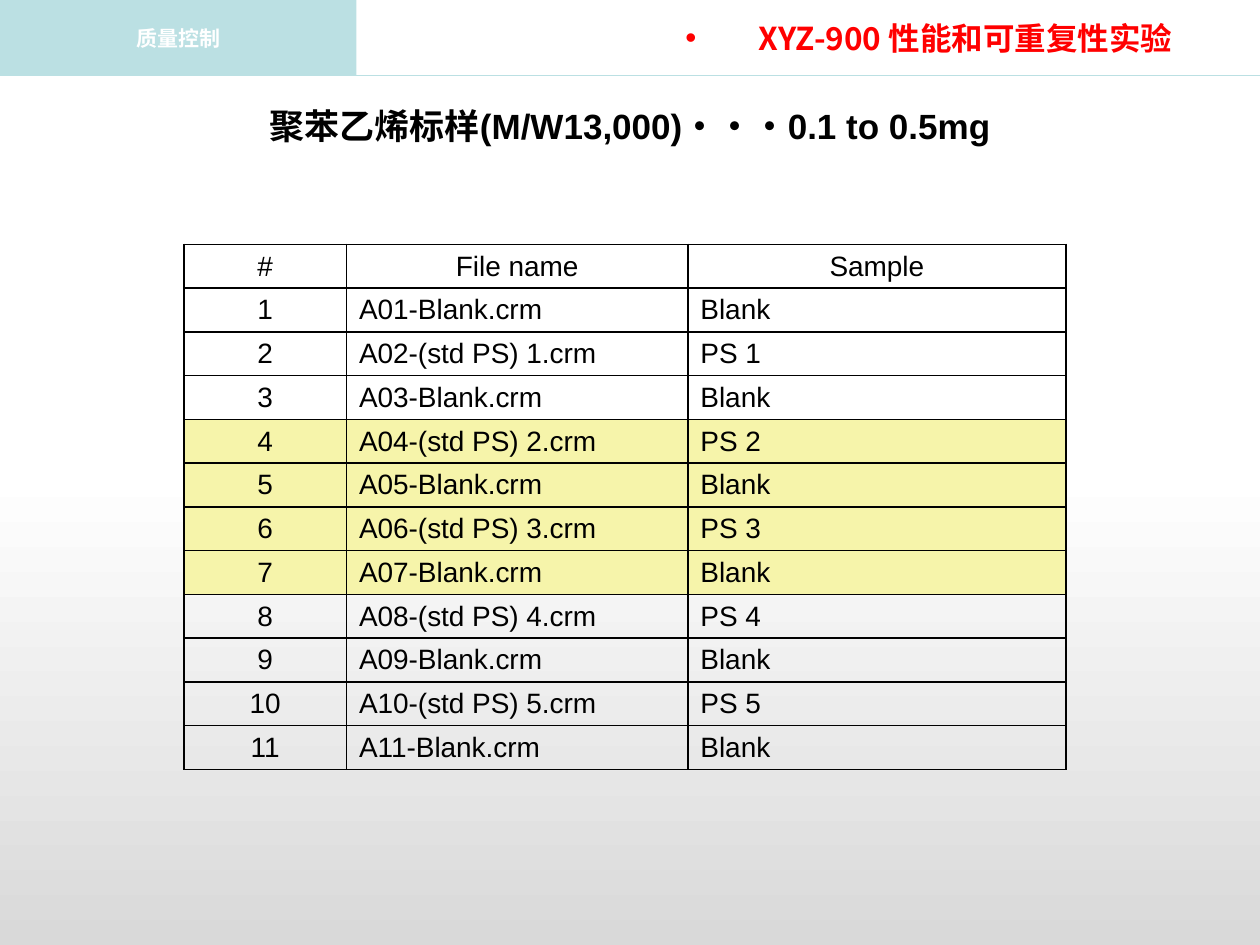
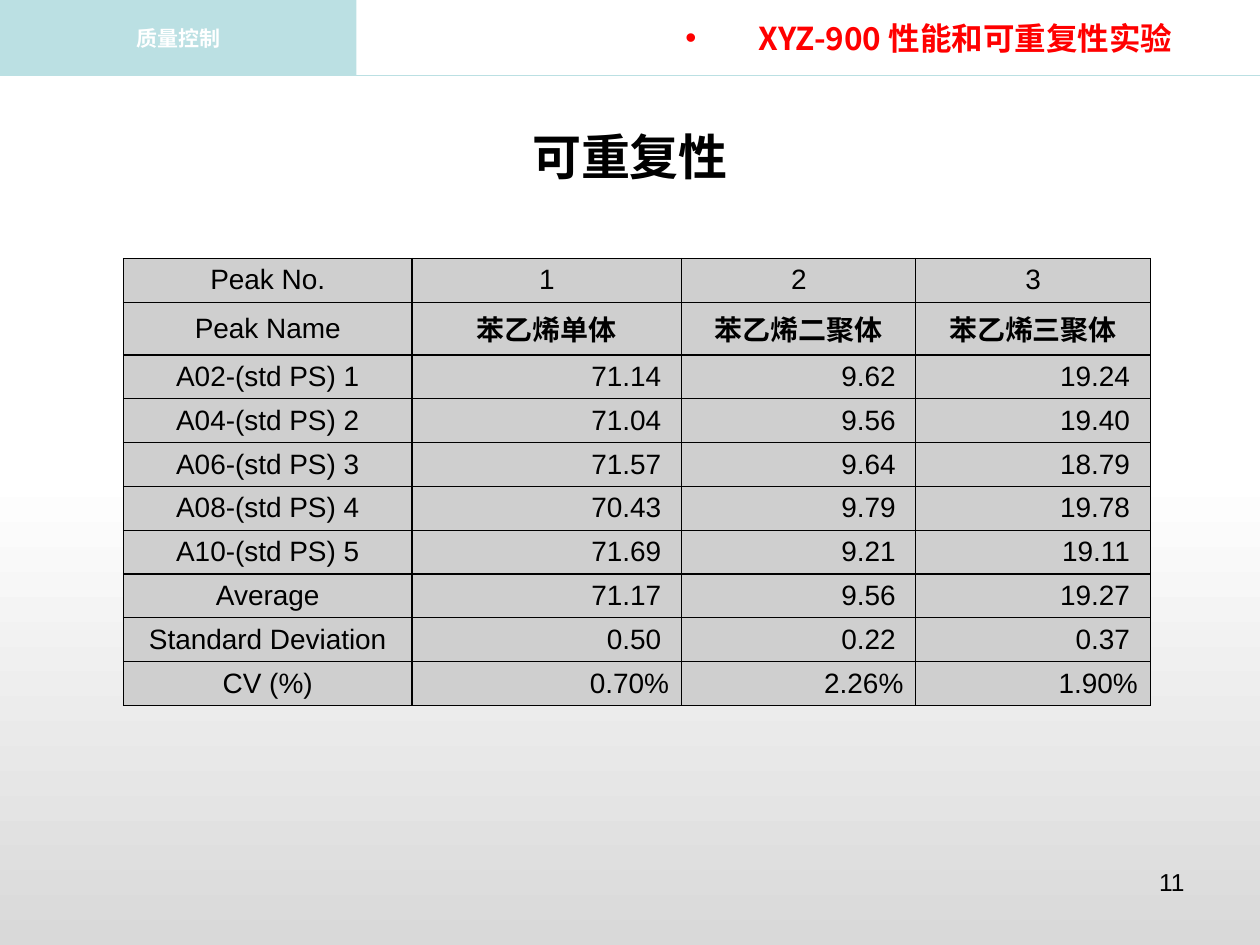
from lxml.etree import SubElement
from pptx import Presentation
from pptx.dml.color import RGBColor
from pptx.enum.shapes import MSO_CONNECTOR, MSO_SHAPE
from pptx.enum.text import MSO_ANCHOR, MSO_AUTO_SIZE, PP_ALIGN
from pptx.oxml.ns import qn
from pptx.util import Inches, Pt

SECTION = "质量控制"
HEADING = "XYZ-900 性能和可重复性实验"
LATIN, CHINESE = "Arial", "Noto Sans CJK SC"

SAMPLES_TITLE = [("聚苯乙烯标样", CHINESE), ("(M/W13,000)・・・0.1 to 0.5mg", LATIN)]
SAMPLES_HEADER = ("#", "File name", "Sample")
SAMPLE_COUNT = 11
HIGHLIGHTED_SAMPLES = range(4, 8)

REPEATABILITY_TITLE = [("可重复性", CHINESE)]
PEAK_ROWS = [
    ("Peak No.", "1", "2", "3"),
    ("Peak Name", "苯乙烯单体", "苯乙烯二聚体", "苯乙烯三聚体"),
    ("A02-(std PS) 1", "71.14 ", "9.62 ", "19.24 "),
    ("A04-(std PS) 2", "71.04 ", "9.56 ", "19.40 "),
    ("A06-(std PS) 3", "71.57 ", "9.64 ", "18.79 "),
    ("A08-(std PS) 4", "70.43 ", "9.79 ", "19.78 "),
    ("A10-(std PS) 5", "71.69 ", "9.21 ", "19.11 "),
    ("Average", "71.17 ", "9.56 ", "19.27 "),
    ("Standard Deviation", "0.50 ", "0.22 ", "0.37 "),
    ("CV (%)", "0.70%", "2.26%", "1.90%"),
]
PEAK_NAME_ROW = 1

BLACK = RGBColor(0x00, 0x00, 0x00)
WHITE = RGBColor(0xFF, 0xFF, 0xFF)
RED = RGBColor(0xFF, 0x00, 0x00)
BAND = RGBColor(0xBB, 0xE0, 0xE3)
BACKDROP_GREY = RGBColor(0xD9, 0xD9, 0xD9)
TABLE_GREY = RGBColor(0xCF, 0xCF, 0xCF)
YELLOW = RGBColor(0xF6, 0xF4, 0xAA)

PAGE_WIDTH, PAGE_HEIGHT = 10, 7.5
BAND_WIDTH, BAND_HEIGHT = 2.83, 0.6


def write(para, text, size, font=LATIN, color=BLACK, bold=False, align=None):
    span = para.add_run()
    span.text = text
    span.font.size = Pt(size)
    span.font.bold = bold
    span.font.color.rgb = color
    span.font.name = font
    SubElement(span.font._element, qn("a:ea"), typeface=CHINESE)
    if align is not None:
        para.alignment = align


def place(box, left, top, width, height, anchor=MSO_ANCHOR.MIDDLE):
    box.left, box.top = Inches(left), Inches(top)
    box.width, box.height = Inches(width), Inches(height)
    frame = box.text_frame
    frame.word_wrap = True
    frame.auto_size = MSO_AUTO_SIZE.NONE
    frame.vertical_anchor = anchor
    return frame.paragraphs[0]


def add_rectangle(page, width, height):
    box = page.shapes.add_shape(MSO_SHAPE.RECTANGLE, 0, 0, Inches(width), Inches(height))
    box.shadow.inherit = False
    box.line.fill.background()
    return box


def add_backdrop(page):
    fill = add_rectangle(page, PAGE_WIDTH, PAGE_HEIGHT).fill
    fill.gradient()
    fill.gradient_angle = 90
    for stop, position, color in zip(fill.gradient_stops, (0, 0.5), (BACKDROP_GREY, WHITE)):
        stop.position = position
        stop.color.rgb = color


def add_band(page):
    band = add_rectangle(page, BAND_WIDTH, BAND_HEIGHT)
    band.fill.solid()
    band.fill.fore_color.rgb = BAND
    para = place(band, 0, 0, BAND_WIDTH, BAND_HEIGHT)
    write(para, SECTION, 12, color=WHITE, bold=True, align=PP_ALIGN.CENTER)

    rule = page.shapes.add_connector(
        MSO_CONNECTOR.STRAIGHT, 0, Inches(BAND_HEIGHT), Inches(PAGE_WIDTH), Inches(BAND_HEIGHT))
    rule.line.color.rgb = BAND
    rule.line.width = Pt(0.75)
    SubElement(rule._element.spPr, qn("a:effectLst"))


def fill_heading(box):
    para = place(box, 4.84, 0, 5.16, BAND_HEIGHT)
    para.level = 1
    settings = para._p.get_or_add_pPr()
    settings.set("marL", str(Inches(1.08)))
    settings.set("indent", str(Inches(-0.58)))
    SubElement(settings, qn("a:buChar"), char="•")
    write(para, HEADING, 18, font=CHINESE, color=RED, bold=True)


def add_page(deck, title, title_size, title_top, title_height):
    page = deck.slides.add_slide(deck.slide_layouts[1])
    title_box, heading_box = page.placeholders
    add_backdrop(page)
    add_band(page)
    for box in (title_box, heading_box):
        page.shapes._spTree.append(box._element)  # bring in front of the backdrop
    para = place(title_box, 0, title_top, PAGE_WIDTH, title_height)
    for text, font in title:
        write(para, text, title_size, font=font, bold=True, align=PP_ALIGN.CENTER)
    fill_heading(heading_box)
    return page


def add_borders(cell, width):
    settings = cell._tc.get_or_add_tcPr()
    for side in ("lnL", "lnR", "lnT", "lnB"):
        line = SubElement(settings, qn(f"a:{side}"), w=str(Pt(width)))
        SubElement(SubElement(line, qn("a:solidFill")), qn("a:srgbClr"), val=str(BLACK))


def add_grid(page, rows, left, top, column_widths, row_heights, border, style):
    """Add a table; style(row, column) gives alignment, fill colour or None, and bold."""
    table = page.shapes.add_table(
        len(rows), len(column_widths), Inches(left), Inches(top),
        Inches(sum(column_widths)), Inches(sum(row_heights))).table
    table.first_row = table.horz_banding = False
    for column, width in zip(table.columns, column_widths):
        column.width = Inches(width)
    for r, (texts, height) in enumerate(zip(rows, row_heights)):
        table.rows[r].height = Inches(height)
        for c, text in enumerate(texts):
            align, color, bold = style(r, c)
            cell = table.cell(r, c)
            cell.margin_top = cell.margin_bottom = Inches(0.04)
            cell.vertical_anchor = MSO_ANCHOR.MIDDLE
            add_borders(cell, border)
            if color is None:
                cell.fill.background()
            else:
                cell.fill.solid()
                cell.fill.fore_color.rgb = color
            write(cell.text_frame.paragraphs[0], text, 16, bold=bold, align=align)


def sample_row(number):
    """Blanks have odd numbers; the even ones are polystyrene standards."""
    if number % 2:
        return str(number), f"A{number:02}-Blank.crm", "Blank"
    standard = number // 2
    return str(number), f"A{number:02}-(std PS) {standard}.crm", f"PS {standard}"


def sample_style(row, column):
    align = PP_ALIGN.CENTER if row == 0 or column == 0 else PP_ALIGN.LEFT
    return align, YELLOW if row in HIGHLIGHTED_SAMPLES else None, False


def peak_style(row, column):
    centred = row <= PEAK_NAME_ROW or column == 0
    bold = row == PEAK_NAME_ROW and column > 0
    return PP_ALIGN.CENTER if centred else PP_ALIGN.RIGHT, TABLE_GREY, bold


def build_samples_page(deck):
    page = add_page(deck, SAMPLES_TITLE, 20, title_top=0.6, title_height=0.8)
    rows = [SAMPLES_HEADER] + [sample_row(n) for n in range(1, SAMPLE_COUNT + 1)]
    heights = [4.17 / len(rows)] * len(rows)
    add_grid(page, rows, 1.46, 1.94, (1.29, 2.71, 3), heights, 1, sample_style)


def build_repeatability_page(deck):
    page = add_page(deck, REPEATABILITY_TITLE, 28, title_top=0.76, title_height=0.95)
    name_height = 0.42
    heights = [(3.55 - name_height) / (len(PEAK_ROWS) - 1)] * len(PEAK_ROWS)
    heights[PEAK_NAME_ROW] = name_height
    add_grid(page, PEAK_ROWS, 0.98, 2.05, (2.29, 2.14, 1.86, 1.86), heights, 0.75, peak_style)
    number_box = page.shapes.add_textbox(0, 0, 0, 0)
    para = place(number_box, 7.17, 6.83, 2.33, 0.52, anchor=MSO_ANCHOR.TOP)
    write(para, "11", 14, align=PP_ALIGN.RIGHT)


def main():
    deck = Presentation()
    deck.slide_width, deck.slide_height = Inches(PAGE_WIDTH), Inches(PAGE_HEIGHT)
    build_samples_page(deck)
    build_repeatability_page(deck)
    deck.save("out.pptx")


if __name__ == "__main__":
    main()
